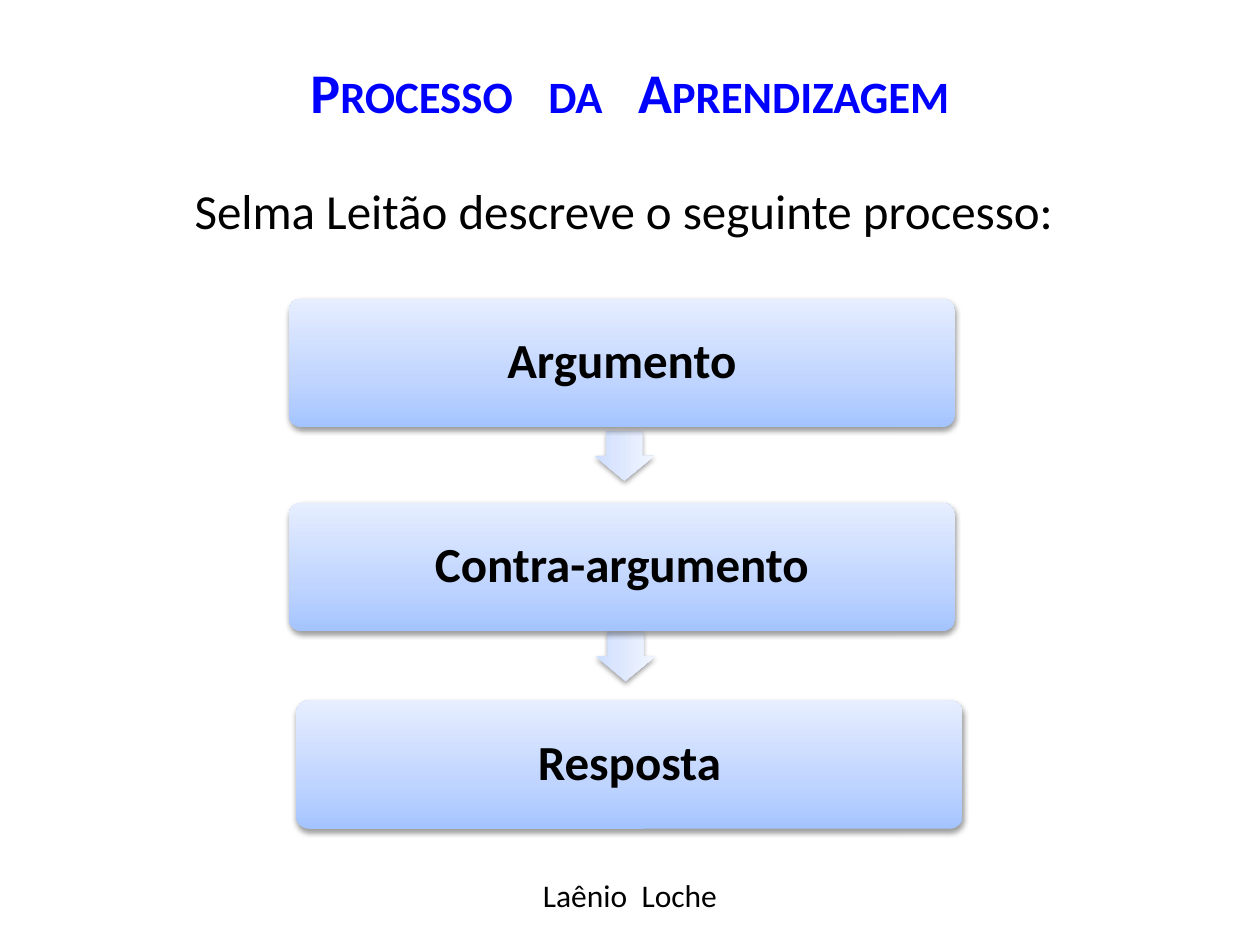
import pptx
import pptx.util
import pptx.dml.color
import pptx.enum.shapes
import pptx.enum.text
import pptx.oxml
import pptx.oxml.ns

THEME = {
    "font": "Calibri",
    "title": "0000FF", "text": "000000",
    "title_size": 32, "body_size": 28, "footer_size": 18,
    "box_stops": [(0, "A4C4FF"), (35, "BFD4FF"), (100, "E6EEFF")],
    "arrow_stops": [(0, "CDDDFF"), (35, "DBE6FE"), (100, "F1F5FF")],
}
SPACE_WIDTH = 0.226  # width of a space, as a share of the type size

deck = pptx.Presentation()
deck.slide_width = pptx.util.Inches(10)
deck.slide_height = pptx.util.Inches(7.5)
W, H = deck.slide_width, deck.slide_height
page = deck.slides.add_slide(deck.slide_layouts[5])


def write(shape, words, size, color="text", bold=False, small_caps=False, wide=False):
    """Centre the words in the shape; wide doubles the gaps between words."""
    frame = shape.text_frame
    frame.word_wrap = True
    para = frame.paragraphs[0]
    para.alignment = pptx.enum.text.PP_ALIGN.CENTER
    pieces = words.replace(" ", "| |").split("|") if wide else [words]
    for piece in pieces:
        span = para.add_run()
        span.text = piece
        span.font.name = THEME["font"]
        span.font.size = pptx.util.Pt(THEME[size])
        span.font.bold = bold
        span.font.color.rgb = pptx.dml.color.RGBColor.from_string(THEME[color])
        props = span.font._element
        if small_caps:
            props.set("cap", "small")
        if piece == " ":
            props.set("spc", str(round(THEME[size] * SPACE_WIDTH * 100)))


def shade(shape, stops):
    """Gradient rising from the lower edge, no outline, soft shadow below."""
    shape.fill.gradient()
    shape.fill.gradient_angle = 90
    shape.line.fill.background()
    shape.shadow.inherit = False
    ns = pptx.oxml.ns.nsdecls("a")
    props = shape._element.spPr
    stop_list = props.find(".//" + pptx.oxml.ns.qn("a:gsLst"))
    for old in list(stop_list):
        stop_list.remove(old)
    for share, color in stops:
        stop_list.append(pptx.oxml.parse_xml(
            f'<a:gs {ns} pos="{share * 1000}"><a:srgbClr val="{color}"/></a:gs>'))
    props.find(pptx.oxml.ns.qn("a:effectLst")).append(pptx.oxml.parse_xml(
        f'<a:outerShdw {ns} blurRad="40000" dist="20000" dir="5400000" rotWithShape="0">'
        '<a:srgbClr val="000000"><a:alpha val="38000"/></a:srgbClr></a:outerShdw>'))


# Title
title = page.shapes.title
title.left, title.top = int(W * 0.176), int(H * 0.039)
title.width, title.height = int(W * 0.648), int(H * 0.115)
title.text_frame.auto_size = pptx.enum.text.MSO_AUTO_SIZE.NONE
title.text_frame.vertical_anchor = pptx.enum.text.MSO_ANCHOR.MIDDLE
write(title, "Processo da Aprendizagem", "title_size", "title",
      bold=True, small_caps=True, wide=True)

# Lead-in and footer: left, top, width, height as shares of the slide
for words, size, wide, (x, y, w, h) in [
    ("Selma Leitão descreve o seguinte processo:", "body_size", False,
     (0.105, 0.185, 0.78, 0.076)),
    ("Laênio Loche", "footer_size", True, (0.315, 0.92, 0.37, 0.054)),
]:
    box = page.shapes.add_textbox(int(W * x), int(H * y), int(W * w), int(H * h))
    box.text_frame.auto_size = pptx.enum.text.MSO_AUTO_SIZE.SHAPE_TO_FIT_TEXT
    write(box, words, size, wide=wide)

# Arrows between the steps, turned to point down
for x, y in [(0.476, 0.451), (0.477, 0.663)]:
    arrow = page.shapes.add_shape(
        pptx.enum.shapes.MSO_SHAPE.RIGHT_ARROW,
        int(W * x), int(H * y), int(W * 0.039), int(H * 0.063))
    arrow.rotation = 90
    arrow.adjustments[0], arrow.adjustments[1] = 0.6, 0.5
    shade(arrow, THEME["arrow_stops"])

# Steps of the process
for words, x, y in [
    ("Argumento", 0.229, 0.316),
    ("Contra-argumento", 0.229, 0.532),
    ("Resposta", 0.235, 0.741),
]:
    step = page.shapes.add_shape(
        pptx.enum.shapes.MSO_SHAPE.ROUNDED_RECTANGLE,
        int(W * x), int(H * y), int(W * 0.529), int(H * 0.136))
    step.adjustments[0] = 0.1
    shade(step, THEME["box_stops"])
    step.text_frame.vertical_anchor = pptx.enum.text.MSO_ANCHOR.MIDDLE
    write(step, words, "body_size", bold=True)
    step.text_frame.paragraphs[0].line_spacing = 0.9

deck.save("out.pptx")
